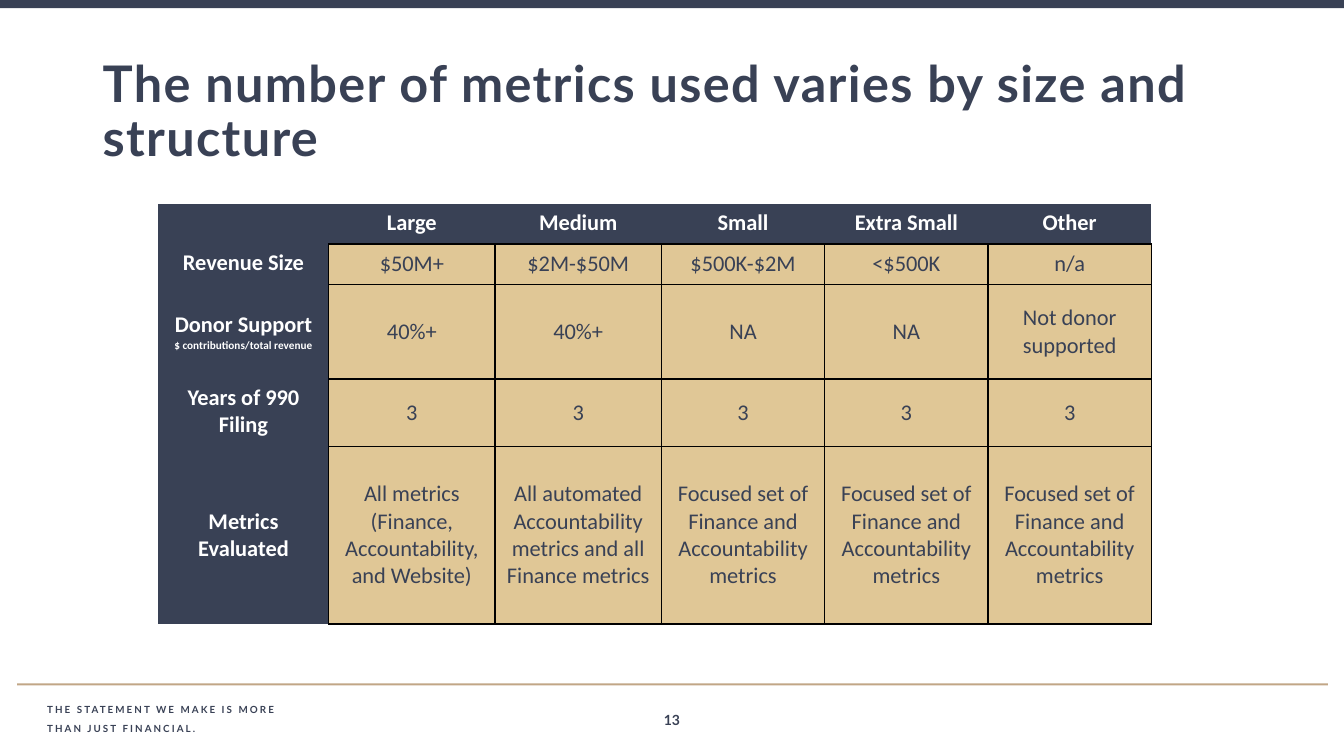
from lxml import etree
from pptx import Presentation
from pptx.dml.color import RGBColor
from pptx.enum.shapes import MSO_SHAPE as Shape
from pptx.enum.text import MSO_ANCHOR as Anchor, PP_ALIGN as Align
from pptx.oxml.ns import qn
from pptx.util import Inches, Pt

NAVY = RGBColor(0x39, 0x41, 0x55)
SAND = RGBColor(0xE0, 0xC7, 0x96)
TAN = RGBColor(0xC1, 0xA6, 0x86)
WHITE = RGBColor(0xFF, 0xFF, 0xFF)
BLACK = RGBColor(0, 0, 0)

SIZES = ["Large", "Medium", "Small", "Extra Small", "Other"]
FOCUSED = "Focused set of Finance and Accountability metrics"
# Label lines, label anchor, values
METRIC_ROWS = [
    (["Revenue Size"], Anchor.TOP,
     ["$50M+", "$2M-$50M", "$500K-$2M", "<$500K", "n/a"]),
    (["Donor Support", "$ contributions/total revenue"], Anchor.MIDDLE,
     ["40%+", "40%+", "NA", "NA", "Not donor supported"]),
    (["Years of 990 Filing"], Anchor.TOP, ["3"] * 5),
    (["Metrics Evaluated"], Anchor.MIDDLE,
     ["All metrics (Finance, Accountability, and Website)",
      "All automated Accountability metrics and all Finance metrics"] + [FOCUSED] * 3),
]
COLUMN_WIDTHS = [1.69, 1.65, 1.65, 1.62, 1.62, 1.62]
ROW_HEIGHTS = [0.4, 0.4, 0.94, 0.67, 1.76]


def add_run(paragraph, text, size, color, bold=True, font="Lato", spacing=0):
    run = paragraph.add_run()
    run.text = text
    run.font.name = font
    run.font.size = Pt(size)
    run.font.bold = bold
    run.font.color.rgb = color
    if spacing:
        run.font._element.set("spc", str(int(spacing * 100)))


def add_bar(slide, left, top, width, height, color):
    bar = slide.shapes.add_shape(
        Shape.RECTANGLE, Inches(left), Inches(top), Inches(width), Inches(height))
    bar.shadow.inherit = False
    bar.fill.solid()
    bar.fill.fore_color.rgb = color
    bar.line.fill.background()


def add_text(slide, left, top, width, height, lines, size, spacing=0,
             align=Align.LEFT, anchor=Anchor.TOP, line_spacing=0.9):
    frame = slide.shapes.add_textbox(
        Inches(left), Inches(top), Inches(width), Inches(height)).text_frame
    frame.word_wrap = True
    frame.vertical_anchor = anchor
    for i, line in enumerate(lines):
        paragraph = frame.add_paragraph() if i else frame.paragraphs[0]
        paragraph.alignment = align
        paragraph.line_spacing = line_spacing
        paragraph.space_after = Pt(6)
        add_run(paragraph, line, size, NAVY, spacing=spacing)


def set_borders(cell, sides):
    """Rule the given sides (from "LRTB") and clear the others."""
    properties = cell._tc.get_or_add_tcPr()
    for side in "LRTB":
        line = etree.SubElement(properties, qn(f"a:ln{side}"), w=str(Pt(1)))
        if side in sides:
            fill = etree.SubElement(line, qn("a:solidFill"))
            etree.SubElement(fill, qn("a:srgbClr"), val=str(BLACK))
        else:
            etree.SubElement(line, qn("a:noFill"))


def fill_cell(cell, lines, fill, color, bold, anchor, sides):
    set_borders(cell, sides)
    cell.fill.solid()
    cell.fill.fore_color.rgb = fill
    cell.vertical_anchor = anchor
    cell.margin_left = cell.margin_right = Inches(0.09)
    cell.margin_top = cell.margin_bottom = Inches(0.05)
    for i, line in enumerate(lines):
        paragraph = cell.text_frame.add_paragraph() if i else cell.text_frame.paragraphs[0]
        paragraph.alignment = Align.CENTER
        add_run(paragraph, line, 8 if i else 16, color, bold, "Calibri")


def add_metrics_table(slide, left, top, width, height):
    table = slide.shapes.add_table(
        len(ROW_HEIGHTS), len(COLUMN_WIDTHS),
        Inches(left), Inches(top), Inches(width), Inches(height)).table
    for column, column_width in zip(table.columns, COLUMN_WIDTHS):
        column.width = Inches(column_width)
    for row, row_height in zip(table.rows, ROW_HEIGHTS):
        row.height = Inches(row_height)

    # Header row
    fill_cell(table.cell(0, 0), [], NAVY, WHITE, True, Anchor.TOP, "")
    for c, size in enumerate(SIZES, 1):
        fill_cell(table.cell(0, c), [size], NAVY, WHITE, True, Anchor.TOP, "B")

    # Label column and values
    for r, (label, label_anchor, values) in enumerate(METRIC_ROWS, 1):
        fill_cell(table.cell(r, 0), label, NAVY, WHITE, True, label_anchor, "R")
        for c, value in enumerate(values, 1):
            fill_cell(table.cell(r, c), [value], SAND, NAVY, False, Anchor.MIDDLE, "LRTB")


def add_footer(slide, left, top, width):
    add_bar(slide, left, top, width, 0.02, TAN)
    add_text(slide, left + width / 2 - 0.31, top + 0.23, 0.61, 0.29, ["13"], 10,
             align=Align.CENTER, line_spacing=1.0)
    add_text(slide, left + 0.2, top + 0.17, 5.57, 0.4,
             ["THE STATEMENT WE MAKE IS MORE", "THAN JUST FINANCIAL."], 7, spacing=1.5)


def main():
    deck = Presentation()
    deck.slide_width = Inches(13.33)
    deck.slide_height = Inches(7.5)
    slide = deck.slides.add_slide(deck.slide_layouts[6])

    # Top band and title
    add_bar(slide, 0, 0, 13.33, 0.08, NAVY)
    add_text(slide, 0.92, 0.4, 11.5, 1.45,
             ["The number of metrics used varies by size and structure"], 36,
             spacing=1, anchor=Anchor.MIDDLE)
    add_metrics_table(slide, 1.57, 2.02, sum(COLUMN_WIDTHS), sum(ROW_HEIGHTS))
    add_footer(slide, 0.17, 6.78, 13)
    deck.save("out.pptx")


if __name__ == "__main__":
    main()
